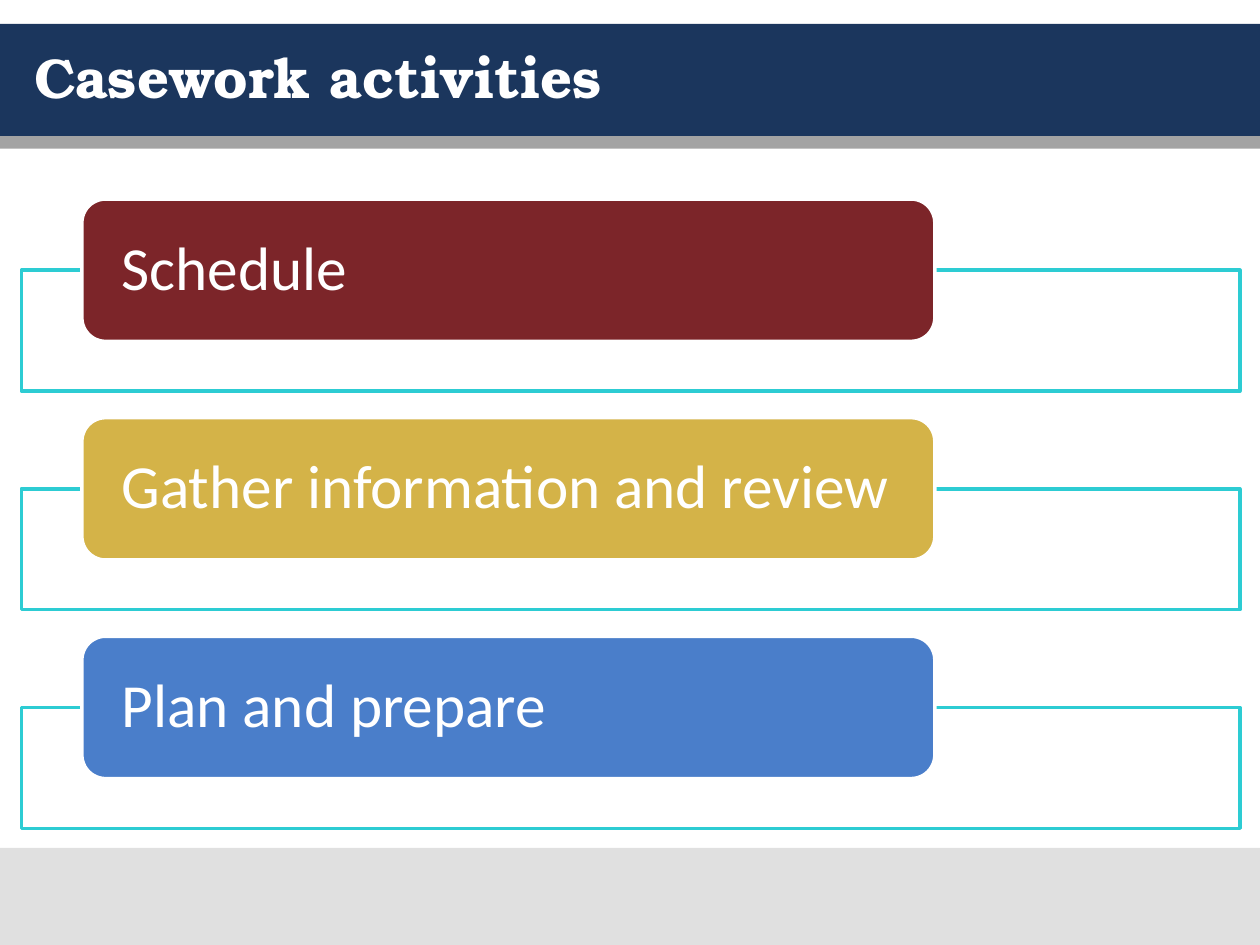
import pptx
import pptx.dml.color
import pptx.enum.shapes
import pptx.enum.text
import pptx.oxml.ns
import pptx.util
from lxml import etree

THEME = {
    "navy": "1B365D", "gray": "A3A3A3", "pale": "E0E0E0", "white": "FFFFFF",
    "teal": "2DCCD3", "red": "7C2529", "gold": "D4B348", "blue": "4A7ECA",
    "title": {"name": "TeX Gyre Bonum", "size": pptx.util.Pt(32), "bold": True},
    "label": {"name": "Calibri", "size": pptx.util.Pt(35), "bold": False},
    "line": pptx.util.Pt(2),
}
KINDS = pptx.enum.shapes.MSO_SHAPE

deck = pptx.Presentation()
deck.slide_width, deck.slide_height = pptx.util.Inches(10), pptx.util.Inches(7.5)
page = deck.slides.add_slide(deck.slide_layouts[5])

# The grid has 100 columns and 75 rows of square cells.
CELL = deck.slide_width / 100


def add_block(kind, cells, fill, line=None):
    """Draw a shape at (column, row, columns, rows), outlined if line is given."""
    block = page.shapes.add_shape(kind, *(round(n * CELL) for n in cells))
    block.shadow.inherit = False
    block.fill.solid()
    block.fill.fore_color.rgb = pptx.dml.color.RGBColor.from_string(THEME[fill])
    if line:
        block.line.color.rgb = pptx.dml.color.RGBColor.from_string(THEME[line])
        block.line.width = THEME["line"]
    else:
        block.line.fill.background()
    return block


def write_text(box, words, style, inset):
    """Write one white, left-aligned line, centred vertically in the box."""
    frame = box.text_frame
    frame_format = {
        "word_wrap": True,
        "auto_size": pptx.enum.text.MSO_AUTO_SIZE.NONE,
        "vertical_anchor": pptx.enum.text.MSO_ANCHOR.MIDDLE,
        "margin_left": round(inset * CELL), "margin_right": round(inset * CELL),
        "margin_top": 0, "margin_bottom": 0,
    }
    for name, value in frame_format.items():
        setattr(frame, name, value)
    para = frame.paragraphs[0]
    para.alignment = pptx.enum.text.PP_ALIGN.LEFT
    para.line_spacing = 0.9
    span = para.add_run()
    span.text = words
    for name, value in THEME[style].items():
        setattr(span.font, name, value)
    span.font.color.rgb = pptx.dml.color.RGBColor.from_string(THEME["white"])


# Header and footer bands
for top, height, fill in [(1.9, 8.9, "navy"), (10.8, 1, "gray"), (67.3, 7.7, "pale")]:
    add_block(KINDS.RECTANGLE, (0, top, 100, height), fill)

# Title, raised above the header band
title = page.shapes.title
title.element.getparent().append(title.element)
title_cells = {"left": 1.7, "top": 1.9, "width": 96.7, "height": 9}
for name, value in title_cells.items():
    setattr(title, name, round(value * CELL))
write_text(title, "Casework activities", "title", 1)

# Activities: a framed panel with a label overlapping its top edge
FIRST_ROW, ROW_STEP, LABEL_HEIGHT = 15.8, 17.35, 11.3
activities = [
    ("Schedule", "red"),
    ("Gather information and review", "gold"),
    ("Plan and prepare", "blue"),
]
for index, (words, fill) in enumerate(activities):
    top = FIRST_ROW + index * ROW_STEP
    panel = add_block(KINDS.RECTANGLE, (1.7, top + LABEL_HEIGHT / 2, 96.7, 9.6), "white", "teal")
    panel_color = panel.element.spPr.find(".//" + pptx.oxml.ns.qn("a:srgbClr"))
    etree.SubElement(panel_color, pptx.oxml.ns.qn("a:alpha"), val="90000")
    label = add_block(KINDS.ROUNDED_RECTANGLE, (6.5, top, 67.7, LABEL_HEIGHT), fill, "white")
    write_text(label, words, "label", 2.6)

deck.save("out.pptx")
